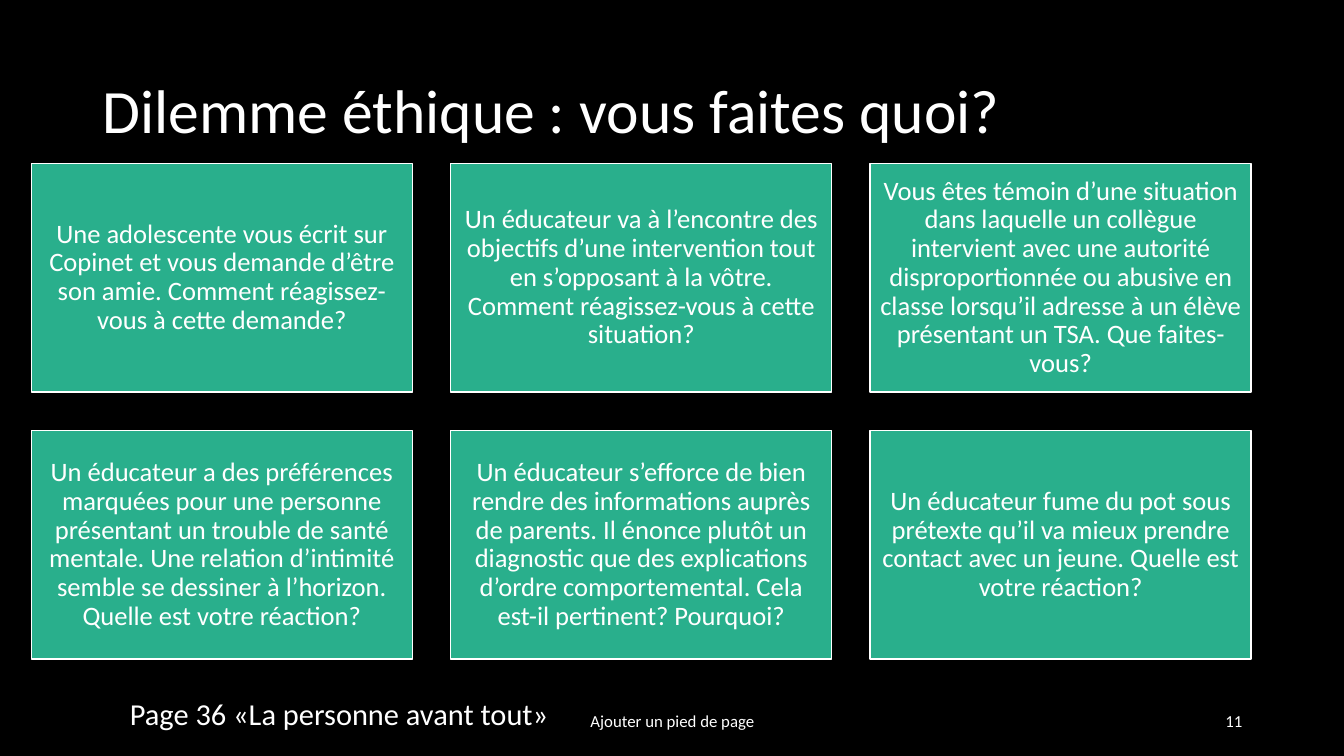
from pptx import Presentation
from pptx.dml.color import RGBColor
from pptx.enum.shapes import MSO_SHAPE
from pptx.enum.text import MSO_ANCHOR, PP_ALIGN
from pptx.util import Inches, Pt

RECT = MSO_SHAPE.RECTANGLE
TOP, MIDDLE = MSO_ANCHOR.TOP, MSO_ANCHOR.MIDDLE
LEFT, CENTER, RIGHT = PP_ALIGN.LEFT, PP_ALIGN.CENTER, PP_ALIGN.RIGHT

FONT = "Calibri"
COLORS = {"background": "000000", "card": "29AF8C", "text": "FFFFFF"}

COLUMNS = 3
GRID_LEFT, GRID_TOP = 0.31, 1.62
CARD_W, CARD_H = 3.78, 2.27
GAP = 0.38
CARD_INSET = 0.08

DILEMMAS = [
    "Une adolescente vous écrit sur Copinet et vous demande d’être son amie. "
    "Comment réagissez-vous à cette demande?",
    "Un éducateur va à l’encontre des objectifs d’une intervention tout en "
    "s’opposant à la vôtre. Comment réagissez-vous à cette situation?",
    "Vous êtes témoin d’une situation dans laquelle un collègue intervient avec "
    "une autorité disproportionnée ou abusive en classe lorsqu’il adresse à un "
    "élève présentant un TSA. Que faites-vous?",
    "Un éducateur a des préférences marquées pour une personne présentant un "
    "trouble de santé mentale. Une relation d’intimité semble se dessiner à "
    "l’horizon. Quelle est votre réaction?",
    "Un éducateur s’efforce de bien rendre des informations auprès de parents. "
    "Il énonce plutôt un diagnostic que des explications d’ordre comportemental. "
    "Cela est-il pertinent? Pourquoi?",
    "Un éducateur fume du pot sous prétexte qu’il va mieux prendre contact avec "
    "un jeune. Quelle est votre réaction?",
]


def color(name):
    return RGBColor.from_string(COLORS[name])


def write(sp, text, size, align=LEFT, anchor=MIDDLE, spacing=1.0):
    tf = sp.text_frame
    tf.word_wrap = True
    tf.vertical_anchor = anchor
    p = tf.paragraphs[0]
    p.alignment = align
    p.line_spacing = spacing
    r = p.add_run()
    r.text = text
    r.font.name = FONT
    r.font.size = Pt(size)
    r.font.color.rgb = color("text")
    return p


def add_text(s, box, text, size, **style):
    sp = s.shapes.add_textbox(*map(Inches, box))
    return write(sp, text, size, **style)


def add_card(s, index, text):
    row, col = divmod(index, COLUMNS)
    x = GRID_LEFT + col * (CARD_W + GAP)
    y = GRID_TOP + row * (CARD_H + GAP)
    sp = s.shapes.add_shape(RECT, *map(Inches, (x, y, CARD_W, CARD_H)))
    sp.shadow.inherit = False
    sp.fill.solid()
    sp.fill.fore_color.rgb = color("card")
    sp.line.color.rgb = color("text")
    sp.line.width = Pt(1)
    tf = sp.text_frame
    tf.margin_left = tf.margin_right = Inches(CARD_INSET)
    tf.margin_top = tf.margin_bottom = Inches(CARD_INSET)
    write(sp, text, 19, align=CENTER, spacing=0.9)


def main():
    prs = Presentation()
    prs.slide_width, prs.slide_height = Inches(13.33), Inches(7.5)
    s = prs.slides.add_slide(prs.slide_layouts[6])
    s.background.fill.solid()
    s.background.fill.fore_color.rgb = color("background")

    add_text(s, (0.92, 0.4, 11.5, 1.45), "Dilemme éthique : vous faites quoi?", 44,
             spacing=0.9)
    p = add_text(s, (1.19, 6.95, 12.1, 0.39), "Page 36 «La personne avant tout»", 21.7,
                 anchor=TOP, spacing=0.7)
    p.space_before = Pt(10)
    for index, dilemma in enumerate(DILEMMAS):
        add_card(s, index, dilemma)
    add_text(s, (4.42, 6.95, 4.5, 0.4), "Ajouter un pied de page", 12, align=CENTER)
    add_text(s, (9.42, 6.95, 3, 0.4), "11", 12, align=RIGHT)

    prs.save("out.pptx")


if __name__ == "__main__":
    main()
